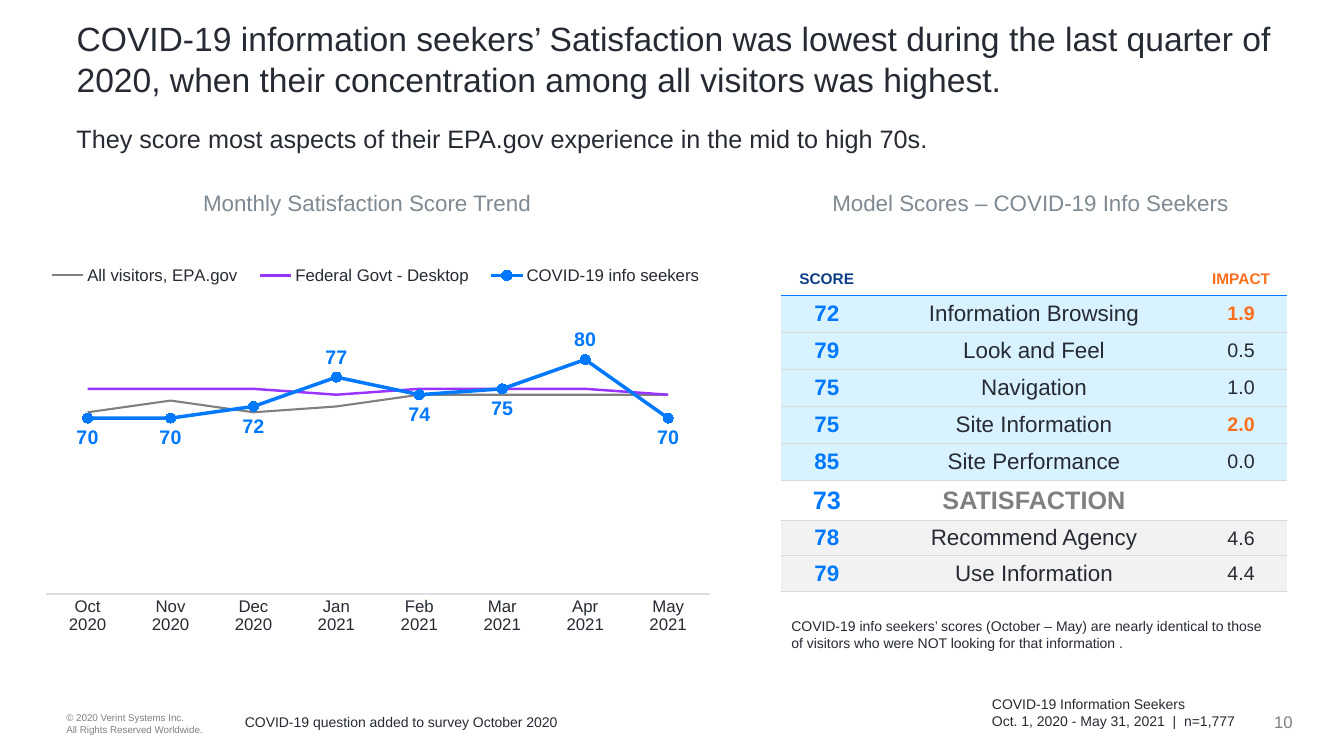
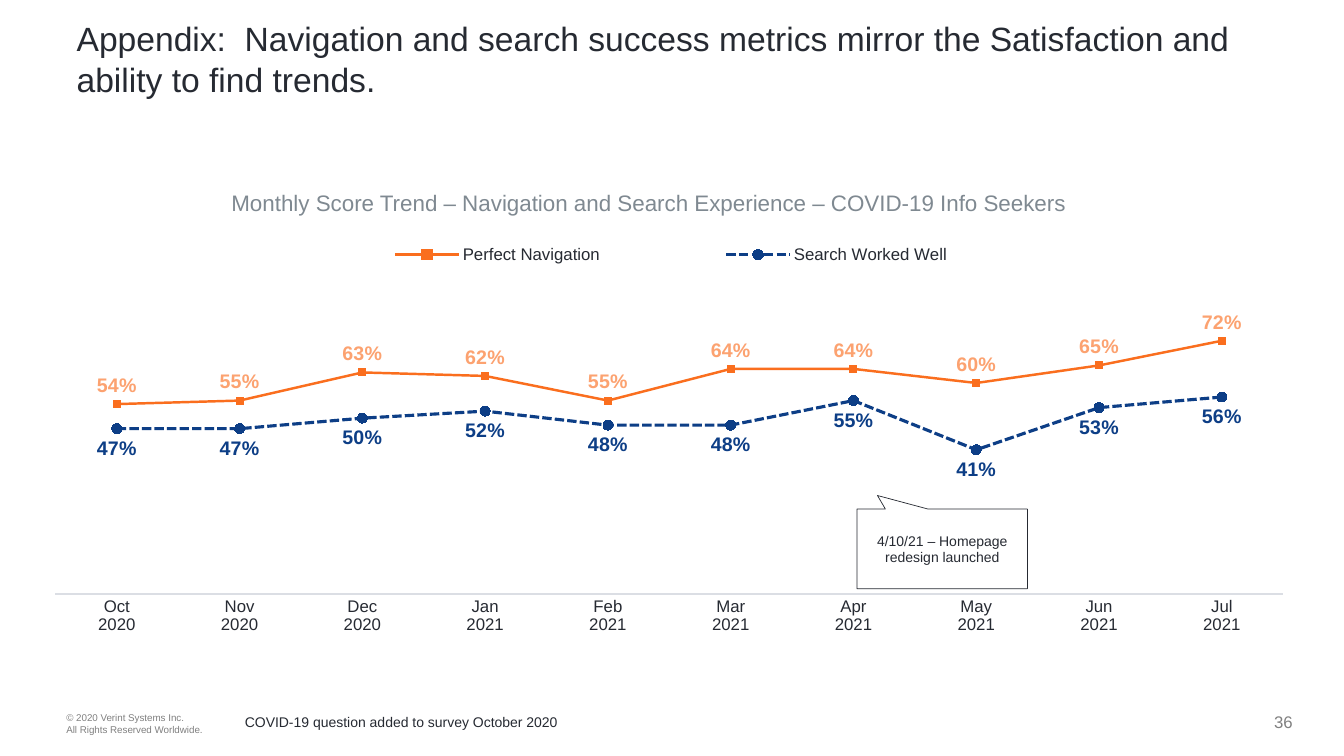
"""Builds two survey slides with satisfaction trends and model scores."""
from lxml import etree
from pptx import Presentation
from pptx.chart.data import CategoryChartData
from pptx.dml.color import RGBColor
from pptx.enum.chart import (XL_CHART_TYPE, XL_LABEL_POSITION, XL_LEGEND_POSITION,
                             XL_MARKER_STYLE, XL_TICK_LABEL_POSITION, XL_TICK_MARK)
from pptx.enum.dml import MSO_LINE
from pptx.enum.shapes import MSO_SHAPE
from pptx.enum.text import MSO_ANCHOR, MSO_AUTO_SIZE, PP_ALIGN
from pptx.oxml.ns import qn
from pptx.util import Inches, Pt

INK = RGBColor(0x26, 0x2A, 0x32)
GRAY = RGBColor(0x80, 0x80, 0x80)
HEADING = RGBColor(0x7F, 0x89, 0x91)
AXIS = RGBColor(0xDB, 0xDE, 0xE4)
RULE = RGBColor(0xD9, 0xD9, 0xD9)
BLUE = RGBColor(0x00, 0x79, 0xFF)
NAVY = RGBColor(0x0D, 0x3E, 0x86)
PURPLE = RGBColor(0x99, 0x33, 0xFF)
ORANGE = RGBColor(0xFA, 0x6E, 0x1E)
LIGHT_ORANGE = RGBColor(0xFC, 0xA2, 0x70)
PALE_BLUE = RGBColor(0xD9, 0xF2, 0xFF)
PALE_GRAY = RGBColor(0xF2, 0xF2, 0xF2)

LEFT, CENTER, RIGHT = PP_ALIGN.LEFT, PP_ALIGN.CENTER, PP_ALIGN.RIGHT
TOP, MIDDLE = MSO_ANCHOR.TOP, MSO_ANCHOR.MIDDLE
ABOVE, BELOW = XL_LABEL_POSITION.ABOVE, XL_LABEL_POSITION.BELOW
CIRCLE, SQUARE = XL_MARKER_STYLE.CIRCLE, XL_MARKER_STYLE.SQUARE
NO_MARKER = XL_MARKER_STYLE.NONE
DASH = MSO_LINE.SQUARE_DOT
FONT = "Arial"
PLOT_AREA = (0.016, 0.113, 0.975, 0.767)

MONTHS = [f"{month}\n{2020 if index < 3 else 2021}" for index, month in enumerate(
    ["Oct", "Nov", "Dec", "Jan", "Feb", "Mar", "Apr", "May", "Jun", "Jul"])]

SATISFACTION_LINES = [
    dict(name="All visitors, EPA.gov", color=GRAY, width=1.5,
         values=[71, 73, 71, 72, 74, 74, 74, 74]),
    dict(name="Federal Govt - Desktop", color=PURPLE, width=1.75,
         values=[75, 75, 75, 74, 75, 75, 75, 74]),
    dict(name="COVID-19 info seekers", color=BLUE, width=2.5,
         values=[70, 70, 72, 77, 74, 75, 80, 70], marker=(CIRCLE, 7),
         label=(BELOW, BLUE), raised=(3, 6)),
]
SEARCH_LINES = [
    dict(name="Perfect Navigation", color=ORANGE, width=1.75, marker=(SQUARE, 5),
         values=[0.54, 0.55, 0.63, 0.62, 0.55, 0.64, 0.64, 0.6, 0.65, 0.72],
         label=(ABOVE, LIGHT_ORANGE)),
    dict(name="Search Worked Well", color=NAVY, width=2.25, marker=(CIRCLE, 7),
         values=[0.47, 0.47, 0.5, 0.52, 0.48, 0.48, 0.55, 0.41, 0.53, 0.56],
         label=(BELOW, NAVY), dash=DASH),
]
SCORES = [
    ("72", "Information Browsing", "1.9", PALE_BLUE),
    ("79", "Look and Feel", "0.5", PALE_BLUE),
    ("75", "Navigation", "1.0", PALE_BLUE),
    ("75", "Site Information", "2.0", PALE_BLUE),
    ("85", "Site Performance", "0.0", PALE_BLUE),
    ("73", "SATISFACTION", "", None),
    ("78", "Recommend Agency", "4.6", PALE_GRAY),
    ("79", "Use Information", "4.4", PALE_GRAY),
]
KEY_IMPACTS = ("1.9", "2.0")


def style_font(font, size, color=INK, bold=False):
    """Set typeface, size, colour and weight."""
    font.name, font.size, font.bold = FONT, Pt(size), bold
    font.color.rgb = color


def write(frame, text, size=10, color=INK, bold=False, align=LEFT, anchor=TOP):
    """Fill a text frame, one paragraph for each line of text."""
    frame.word_wrap = True
    frame.vertical_anchor = anchor
    for index, line in enumerate(text.split("\n")):
        para = frame.paragraphs[0] if index == 0 else frame.add_paragraph()
        para.alignment = align
        span = para.add_run()
        span.text = line
        style_font(span.font, size, color, bold)


def set_layout(parent, index, place, inner=False):
    """Give a chart part a manual place, as fractions of the chart."""
    for old in parent.findall(qn("c:layout")):
        parent.remove(old)
    layout = etree.Element(qn("c:layout"))
    parent.insert(index, layout)
    manual = etree.SubElement(layout, qn("c:manualLayout"))
    if inner:
        etree.SubElement(manual, qn("c:layoutTarget")).set("val", "inner")
    for name in ("xMode", "yMode"):
        etree.SubElement(manual, qn("c:" + name)).set("val", "edge")
    for name, value in zip("xywh", place):
        etree.SubElement(manual, qn("c:" + name)).set("val", str(value))


def set_borders(cell, top, bottom):
    """Draw top and bottom cell borders, each None or a (colour, points) pair."""
    properties = cell._tc.get_or_add_tcPr()
    edges = (("lnL", None), ("lnR", None), ("lnT", top), ("lnB", bottom))
    for index, (name, border) in enumerate(edges):
        line = etree.Element(qn("a:" + name))
        properties.insert(index, line)
        if border is None:
            etree.SubElement(line, qn("a:noFill"))
            continue
        color, width = border
        line.set("w", str(Pt(width)))
        fill = etree.SubElement(line, qn("a:solidFill"))
        etree.SubElement(fill, qn("a:srgbClr")).set("val", str(color))


class SurveyDeck:
    """Holds the shared slide style and the current slide."""

    def __init__(self):
        self.deck = Presentation()
        self.deck.slide_width, self.deck.slide_height = Inches(13.33), Inches(7.5)
        self.page = None

    def add_page(self, title, number):
        """Start a slide with its title and footers."""
        self.page = self.deck.slides.add_slide(self.deck.slide_layouts[5])
        box = self.page.shapes.title
        box.left, box.top = Inches(0.66), Inches(0.13)
        box.width, box.height = Inches(12.18), Inches(1.3)
        box.text_frame.auto_size = MSO_AUTO_SIZE.NONE
        write(box.text_frame, title, size=24)
        self.add_text(0.56, 6.94, 2, 0.47,
                      "© 2020 Verint Systems Inc.\nAll Rights Reserved Worldwide.",
                      size=7, color=GRAY, anchor=MIDDLE)
        self.add_text(2.33, 7.03, 4.05, 0.27,
                      "COVID-19 question added to survey October 2020")
        self.add_text(12.23, 6.93, 0.69, 0.47, str(number),
                      size=12, color=GRAY, align=RIGHT, anchor=MIDDLE)

    def add_text(self, left, top, width, height, text, **style):
        """Add a wrapped text box."""
        box = self.page.shapes.add_textbox(Inches(left), Inches(top),
                                           Inches(width), Inches(height))
        write(box.text_frame, text, **style)

    def add_heading(self, left, width, text):
        """Add a centred heading above a chart or table."""
        self.add_text(left, 1.83, width, 0.37, text,
                      size=16, color=HEADING, align=CENTER)

    def add_callout(self, left, top, width, height, text, tip):
        """Add an outlined callout with its tip at the given offset."""
        callout = self.page.shapes.add_shape(
            MSO_SHAPE.RECTANGULAR_CALLOUT, Inches(left), Inches(top),
            Inches(width), Inches(height))
        callout.shadow.inherit = False
        callout.fill.background()
        callout.line.color.rgb = INK
        callout.line.width = Pt(0.5)
        callout.adjustments[0], callout.adjustments[1] = tip
        write(callout.text_frame, text, align=CENTER, anchor=MIDDLE)

    def add_trend(self, width, lines, scale, number_format, legend_place):
        """Add a line chart of monthly values."""
        data = CategoryChartData(number_format=number_format)
        data.categories = MONTHS[:len(lines[0]["values"])]
        for line in lines:
            data.add_series(line["name"], line["values"])
        chart = self.page.shapes.add_chart(
            XL_CHART_TYPE.LINE_MARKERS, Inches(0.35), Inches(1.89),
            Inches(width), Inches(4.55), data).chart
        chart.has_title = False
        style_font(chart.font, 10)
        chart.has_legend = True
        chart.legend.position = XL_LEGEND_POSITION.TOP
        chart.legend.include_in_layout = False
        style_font(chart.legend.font, 12)
        set_layout(chart.legend._element, 1, legend_place)
        set_layout(chart._chartSpace.find(".//" + qn("c:plotArea")), 0,
                   PLOT_AREA, inner=True)
        self.style_axes(chart, scale)
        chart.plots[0].vary_by_categories = False
        for series, line in zip(chart.plots[0].series, lines):
            self.style_series(series, line, number_format)

    def style_axes(self, chart, scale):
        """Show only the month axis and fix the value scale."""
        months, values = chart.category_axis, chart.value_axis
        for axis in (months, values):
            axis.has_major_gridlines = False
            axis.major_tick_mark = axis.minor_tick_mark = XL_TICK_MARK.NONE
        style_font(months.tick_labels.font, 12)
        months.format.line.color.rgb = AXIS
        months.format.line.width = Pt(0.75)
        values.tick_label_position = XL_TICK_LABEL_POSITION.NONE
        values.format.line.fill.background()
        values.minimum_scale, values.maximum_scale = scale

    def style_series(self, series, line, number_format):
        """Format one line with its markers and labels."""
        series.smooth = False
        series.format.line.color.rgb = line["color"]
        series.format.line.width = Pt(line["width"])
        if "dash" in line:
            series.format.line.dash_style = line["dash"]
        if "marker" not in line:
            series.marker.style = NO_MARKER
            return
        series.marker.style, series.marker.size = line["marker"]
        series.marker.format.fill.solid()
        series.marker.format.fill.fore_color.rgb = line["color"]
        series.marker.format.line.color.rgb = line["color"]
        position, color = line["label"]
        labels = series.data_labels
        labels.show_value = True
        labels.position = position
        labels.number_format = number_format
        labels.number_format_is_linked = False
        style_font(labels.font, 14, color, True)
        for index in line.get("raised", ()):
            label = series.points[index].data_label
            style_font(label.font, 14, color, True)
            label.position = ABOVE

    def add_scores(self):
        """Add the table of model scores and impacts."""
        table = self.page.shapes.add_table(
            len(SCORES) + 1, 3, Inches(7.75), Inches(2.6),
            Inches(5.01), Inches(3.13)).table
        table.first_row = table.horz_banding = False
        for column, width in zip(table.columns, (0.9, 3.21, 0.9)):
            column.width = Inches(width)
        for row in table.rows:
            row.height = Inches(0.35)
        table.rows[0].height = Inches(0.33)
        header_rule, thin_rule = (BLUE, 1), (RULE, 0.75)
        header = zip(("SCORE", "", "IMPACT"), (NAVY, INK, ORANGE))
        for column, (text, color) in enumerate(header):
            self.fill_cell(table.cell(0, column), text, None, None, header_rule,
                           size=11, color=color, bold=True)
        for row, (score, name, impact, fill) in enumerate(SCORES, 1):
            total, key = fill is None, impact in KEY_IMPACTS
            size = 18 if total else 16
            styles = (dict(size=size, color=BLUE, bold=True),
                      dict(size=size, color=GRAY if total else INK, bold=total,
                           margin=0.01 if fill == PALE_GRAY else 0.05),
                      dict(size=14, color=ORANGE if key else INK, bold=key))
            top = header_rule if row == 1 else thin_rule
            for column, text in enumerate((score, name, impact)):
                self.fill_cell(table.cell(row, column), text, fill, top, thin_rule,
                               **styles[column])

    def fill_cell(self, cell, text, fill, top, bottom, margin=0.01, **style):
        """Set one cell's text, fill, margins and borders."""
        cell.margin_left = cell.margin_right = Inches(0.01)
        cell.margin_top = cell.margin_bottom = Inches(margin)
        cell.vertical_anchor = MIDDLE
        if fill is None:
            cell.fill.background()
        else:
            cell.fill.solid()
            cell.fill.fore_color.rgb = fill
        if text:
            write(cell.text_frame, text, align=CENTER, anchor=MIDDLE, **style)
        set_borders(cell, top, bottom)


def main():
    """Build both slides and save the deck."""
    survey = SurveyDeck()

    survey.add_page("COVID-19 information seekers’ Satisfaction was lowest during the last "
                    "quarter of 2020, when their concentration among all visitors was "
                    "highest.", 10)
    survey.add_text(0.66, 1.17, 11.91, 0.42, "They score most aspects of their EPA.gov "
                    "experience in the mid to high 70s.", size=18)
    survey.add_trend(6.75, SATISFACTION_LINES, (40, 100), "0", (0, 0.16, 1, 0.05))
    survey.add_heading(0.48, 6.32, "Monthly Satisfaction Score Trend")
    survey.add_heading(7.69, 5.06, "Model Scores – COVID-19 Info Seekers")
    survey.add_scores()
    survey.add_text(7.75, 6.08, 5.01, 0.44, "COVID-19 info seekers’ scores (October – May) are "
                    "nearly identical to those of visitors who were NOT looking for that "
                    "information .")
    survey.add_text(9.74, 6.83, 2.85, 0.47, "COVID-19 Information Seekers\n"
                    "Oct. 1, 2020 - May 31, 2021  |  n=1,777", anchor=MIDDLE)

    survey.add_page("Appendix:  Navigation and search success metrics mirror the "
                    "Satisfaction and ability to find trends.", 36)
    survey.add_trend(12.49, SEARCH_LINES, (0, 1), "0%", (0.19, 0.115, 0.63, 0.05))
    survey.add_heading(0.48, 11.91, "Monthly Score Trend – Navigation and Search Experience "
                       "– COVID-19 Info Seekers")
    survey.add_callout(8.5, 5.05, 1.69, 0.79, "4/10/21 – Homepage redesign launched",
                       (-0.38, -0.67))

    survey.deck.save("out.pptx")


if __name__ == "__main__":
    main()
